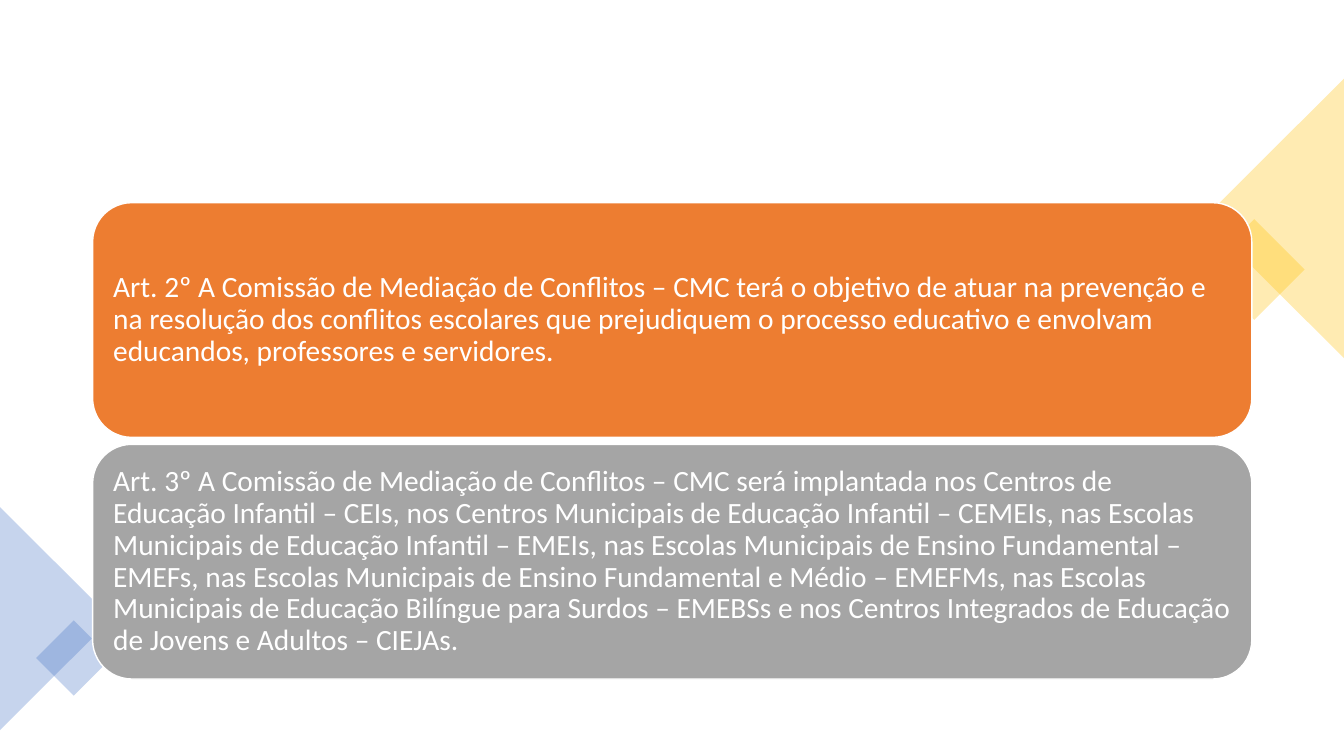
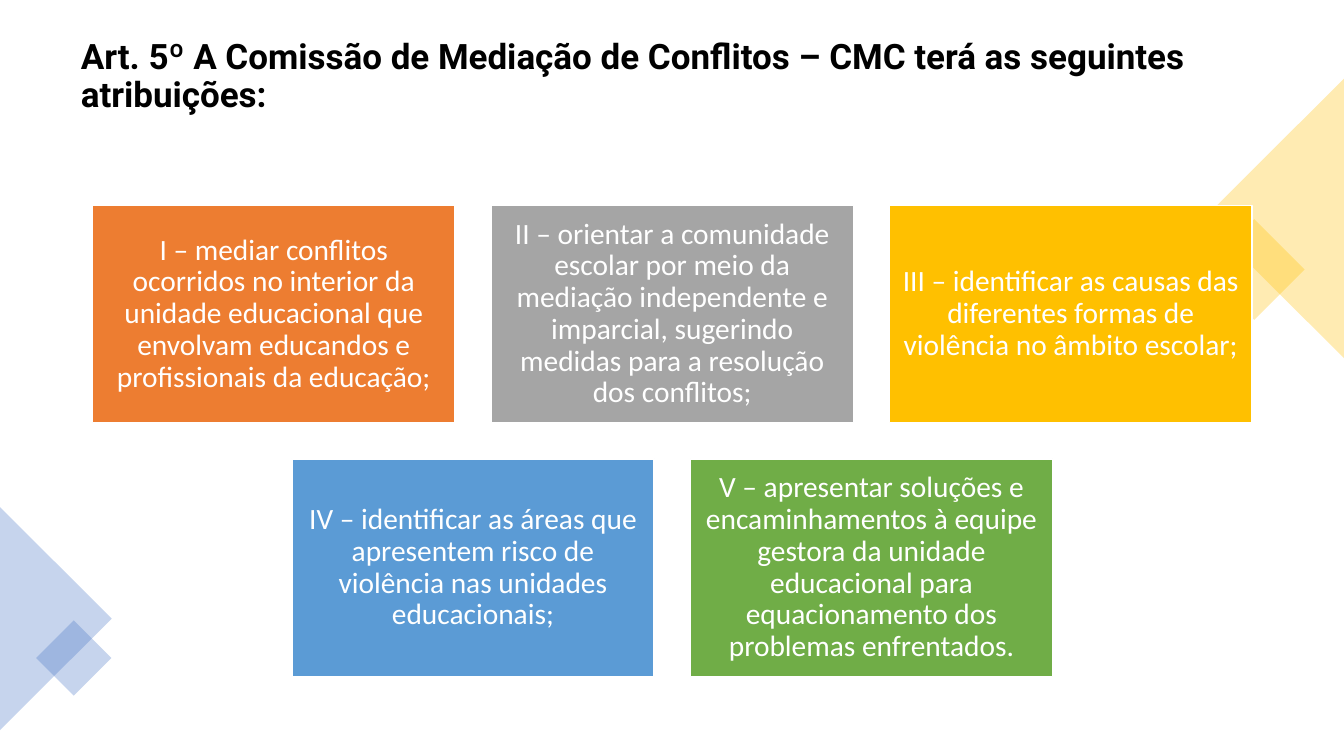
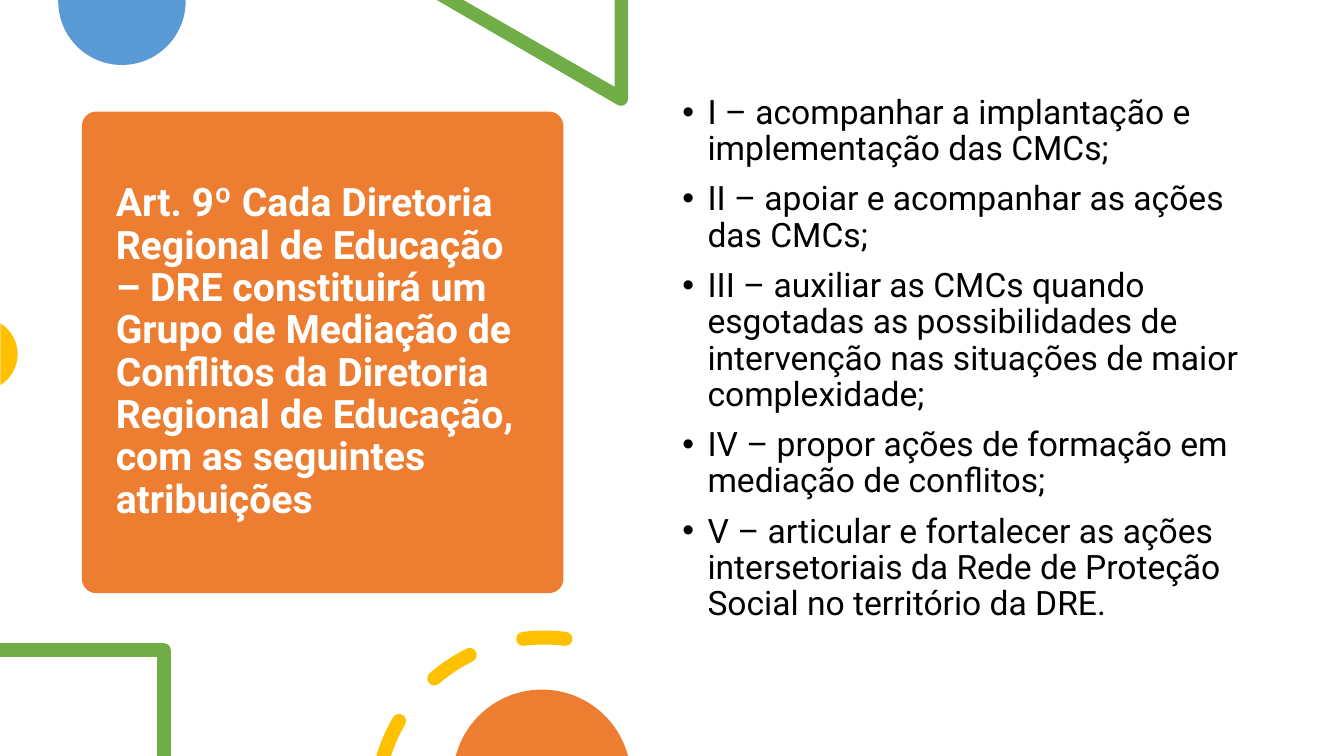
from math import asin, ceil, cos, degrees, radians, sin, tan

from lxml.etree import SubElement
from pptx import Presentation
from pptx.dml.color import RGBColor
from pptx.enum.shapes import MSO_SHAPE as SHAPE
from pptx.enum.text import MSO_ANCHOR as ANCHOR, MSO_AUTO_SIZE as AUTO_SIZE, PP_ALIGN as ALIGN
from pptx.oxml.ns import qn
from pptx.util import Pt

WIDTH, HEIGHT = 960, 540
WHITE, BLACK = "FFFFFF", "000000"
ORANGE, GREY, YELLOW = "ED7D31", "A5A5A5", "FFC000"
SKY, GREEN, BLUE = "5B9BD5", "70AD47", "4472C4"
TITLE_FONT = {"name": "Roboto", "bold": True}
PANEL_FONT = {"name": "Calibri", "size": Pt(21)}
LIST_FONT = {"name": "Roboto", "size": Pt(24)}
PANEL_FRAME = {"word_wrap": True, "vertical_anchor": ANCHOR.MIDDLE,
               "margin_left": Pt(6.5), "margin_right": Pt(6.5),
               "margin_top": Pt(6.5), "margin_bottom": Pt(6.5)}
PANEL_CENTER = 480.2


def color(target, value, opacity=None):
    """Colour a font or line, or fill a shape without outline and shadow."""
    if not hasattr(target, "shadow"):
        target.color.rgb = RGBColor.from_string(value)
        return
    target.shadow.inherit = False
    target.line.fill.background()
    target.fill.solid()
    target.fill.fore_color.rgb = RGBColor.from_string(value)
    if opacity:
        swatch = target.element.spPr.find(qn("a:solidFill")).find(qn("a:srgbClr"))
        SubElement(swatch, qn("a:alpha")).set("val", str(opacity * 1000))


def arc(x, y, radius, start, end):
    """First point, then Bézier triples, along a circle; degrees run clockwise."""
    count = ceil(abs(end - start) / 90)
    step = radians(end - start) / count
    reach = 4 / 3 * tan(step / 4)
    segments = [(x + radius * cos(radians(start)), y + radius * sin(radians(start)))]
    for number in range(count):
        a = radians(start) + number * step
        b = a + step
        segments.append((
            (x + radius * (cos(a) - reach * sin(a)), y + radius * (sin(a) + reach * cos(a))),
            (x + radius * (cos(b) + reach * sin(b)), y + radius * (sin(b) - reach * cos(b))),
            (x + radius * cos(b), y + radius * sin(b))))
    return segments


presentation = Presentation()
presentation.slide_width, presentation.slide_height = Pt(WIDTH), Pt(HEIGHT)
title_only, blank = presentation.slide_layouts[5], presentation.slide_layouts[6]

# Articles in panels, over translucent side ornaments
side_ornaments = [
    (SHAPE.RECTANGLE, (870.4, 167, 51, 51), 45, YELLOW),
    (SHAPE.ISOSCELES_TRIANGLE, (810.2, 106, 199.5, 100), 270, YELLOW),
    (SHAPE.ISOSCELES_TRIANGLE, (-39.75, 402, 159.3, 79.8), 90, BLUE),
    (SHAPE.RECTANGLE, (33.7, 451, 38, 38), 45, BLUE),
]
panel_slides = [
    {
        "title": None, "shape": SHAPE.ROUNDED_RECTANGLE, "align": ALIGN.LEFT,
        "top": 144.8, "size": (828, 167.6), "gap": 5,
        "rows": [
            [(ORANGE, "Art. 2º A Comissão de Mediação de Conflitos – CMC terá o objetivo de atuar "
                      "na prevenção e na resolução dos conflitos escolares que prejudiquem o "
                      "processo educativo e envolvam educandos, professores e servidores.")],
            [(GREY, "Art. 3º A Comissão de Mediação de Conflitos – CMC será implantada nos Centros "
                    "de Educação Infantil – CEIs, nos Centros Municipais de Educação Infantil – "
                    "CEMEIs, nas Escolas Municipais de Educação Infantil – EMEIs, nas Escolas "
                    "Municipais de Ensino Fundamental – EMEFs, nas Escolas Municipais de Ensino "
                    "Fundamental e Médio – EMEFMs, nas Escolas Municipais de Educação Bilíngue "
                    "para Surdos – EMEBSs e nos Centros Integrados de Educação de Jovens e "
                    "Adultos – CIEJAs.")],
        ],
    },
    {
        "title": "Art. 5º A Comissão de Mediação de Conflitos – CMC terá as seguintes atribuições:",
        "shape": SHAPE.RECTANGLE, "align": ALIGN.CENTER,
        "top": 146.7, "size": (258.75, 155.25), "gap": 25.9,
        "rows": [
            [(ORANGE, "I – mediar conflitos ocorridos no interior da unidade educacional que "
                      "envolvam educandos e profissionais da educação;"),
             (GREY, "II – orientar a comunidade escolar por meio da mediação independente e "
                    "imparcial, sugerindo medidas para a resolução dos conflitos;"),
             (YELLOW, "III – identificar as causas das diferentes formas de violência no âmbito "
                      "escolar;")],
            [(SKY, "IV – identificar as áreas que apresentem risco de violência nas unidades "
                   "educacionais;"),
             (GREEN, "V – apresentar soluções e encaminhamentos à equipe gestora da unidade "
                     "educacional para equacionamento dos problemas enfrentados.")],
        ],
    },
]
titles = []
for content in panel_slides:
    slide = presentation.slides.add_slide(title_only if content["title"] else blank)
    if content["title"]:
        titles.append((slide.shapes.title, content["title"], (50.5, 24.5, 859, 89), 25,
                       BLACK, ANCHOR.TOP))
    for kind, box, rotation, fill in side_ornaments:
        ornament = slide.shapes.add_shape(kind, *map(Pt, box))
        ornament.rotation = rotation
        color(ornament, fill, opacity=30)

    width, height = content["size"]
    gap = content["gap"]
    for row_number, row in enumerate(content["rows"]):
        row_left = PANEL_CENTER - (len(row) * (width + gap) - gap) / 2
        top = content["top"] + row_number * (height + gap)
        for column, (fill, text) in enumerate(row):
            left = row_left + column * (width + gap)
            panel = slide.shapes.add_shape(content["shape"], Pt(left), Pt(top), Pt(width), Pt(height))
            color(panel, fill)
            color(panel.line, WHITE)
            panel.line.width = Pt(1)
            for name, value in PANEL_FRAME.items():
                setattr(panel.text_frame, name, value)
            paragraph = panel.text_frame.paragraphs[0]
            paragraph.text = text
            paragraph.alignment = content["align"]
            paragraph.line_spacing = 0.9
            font = paragraph.runs[0].font
            for name, value in PANEL_FONT.items():
                setattr(font, name, value)
            color(font, WHITE)

# Regional duties: title card, bulleted list and geometric ornaments
slide = presentation.slides.add_slide(title_only)
card = slide.shapes.add_shape(SHAPE.ROUNDED_RECTANGLE, Pt(58.5), Pt(79.7), Pt(344), Pt(344))
card.adjustments[0] = 0.03
color(card, ORANGE)
title = slide.shapes.title
title.element.getparent().append(title.element)  # in front of the card
titles.append((title, "Art. 9º Cada Diretoria Regional de Educação – DRE constituirá um Grupo de "
                      "Mediação de Conflitos da Diretoria Regional de Educação, com as seguintes "
                      "atribuições", (75.5, 87.7, 310, 328), 28, WHITE, ANCHOR.MIDDLE))

ring_x, ring_y, ring_radius, half_stroke = 388.8, 575.6, 120.2, 5
outer, inner = ring_radius + half_stroke, ring_radius - half_stroke
bottom_outer, bottom_inner = [degrees(asin((ring_y - HEIGHT) / radius)) - 180
                              for radius in (outer, inner)]
dashes = []
for outer_start, inner_start, end in [(bottom_outer, bottom_inner, -149.7),
                                      (-130.8, -130.8, -116.3), (-97.2, -97.2, -82.8)]:
    spine = arc(ring_x, ring_y, ring_radius, outer_start, end)
    dash = (arc(ring_x, ring_y, outer, outer_start, end)
            + arc(*spine[-1][-1], half_stroke, end, end + 180)[1:]
            + arc(ring_x, ring_y, inner, end, inner_start)[1:])
    if outer_start == inner_start:
        dash += arc(*spine[0], half_stroke, inner_start + 180, inner_start + 360)[1:]
    dashes.append(dash)

outlines = [
    (SKY, [[(132.5, 0)] + arc(87.1, 0.9, 45.5, 0, 180) + [(41.6, 0)]]),
    (GREEN, [[(448.6, 0), (439, 0), (439, 62), (331, 0), (312, 0)]
             + arc(443.6, 70.6, 5, 120, 0)]),
    (YELLOW, [arc(-13.3, 253, 25.9, -58.3, 58.3)]),
    (GREEN, [[(0, 469.2), (0, 459.4)] + arc(117, 464.4, 5, -90, 0)
             + [(122, HEIGHT), (112.2, HEIGHT), (112.2, 469.2)]]),
    (YELLOW, dashes),
    (ORANGE, [arc(387.1, 556.2, 63.6, -165.2, -14.8)]),
]
for fill, contours in outlines:
    builder = None
    segments = []
    for contour in contours:
        points = []
        for segment in contour:
            points += segment if isinstance(segment[0], tuple) else [segment]
        points = [(100 * x, 100 * y) for x, y in points]
        if builder is None:
            builder = slide.shapes.build_freeform(*points[0], scale=Pt(1) / 100)
        else:
            builder.move_to(*points[0])
        builder.add_line_segments(points[1:], close=True)
        segments += contour[1:]
    ornament = builder.convert_to_shape()
    color(ornament, fill)
    # Each Bézier triple was laid down as three line steps: join them into one curve
    steps = iter(list(ornament.element.iter(qn("a:lnTo"))))
    for segment in segments:
        step = next(steps)
        if isinstance(segment[0], tuple):
            step.tag = qn("a:cubicBezTo")
            for extra in (next(steps), next(steps)):
                step.append(extra[0])
                extra.getparent().remove(extra)

duties = [
    "I – acompanhar a implantação e implementação das CMCs;",
    "II – apoiar e acompanhar as ações das CMCs;",
    "III – auxiliar as CMCs quando esgotadas as possibilidades de intervenção nas situações de "
    "maior complexidade;",
    "IV – propor ações de formação em mediação de conflitos;",
    "V – articular e fortalecer as ações intersetoriais da Rede de Proteção Social no território "
    "da DRE.",
]
duty_list = slide.shapes.add_textbox(Pt(480.3), Pt(64.6), Pt(414), Pt(385)).text_frame
duty_list.word_wrap = True
for number, duty in enumerate(duties):
    paragraph = duty_list.add_paragraph() if number else duty_list.paragraphs[0]
    paragraph.text = duty
    paragraph.line_spacing = 0.9
    paragraph.space_before = Pt(10)
    font = paragraph.runs[0].font
    for name, value in LIST_FONT.items():
        setattr(font, name, value)
    color(font, BLACK)
    properties = paragraph._p.get_or_add_pPr()
    properties.set("marL", str(Pt(18)))
    properties.set("indent", str(Pt(-18)))
    SubElement(properties, qn("a:buFont")).set("typeface", "Arial")
    SubElement(properties, qn("a:buChar")).set("char", "•")

# Titles
for title, text, box, size, text_color, anchor in titles:
    title.left, title.top, title.width, title.height = map(Pt, box)
    frame = title.text_frame
    frame.text = text
    frame.word_wrap = True
    frame.auto_size = AUTO_SIZE.NONE
    frame.vertical_anchor = anchor
    paragraph = frame.paragraphs[0]
    paragraph.alignment = ALIGN.LEFT
    paragraph.line_spacing = 0.9
    font = paragraph.runs[0].font
    for name, value in TITLE_FONT.items():
        setattr(font, name, value)
    font.size = Pt(size)
    color(font, text_color)

presentation.save("out.pptx")
